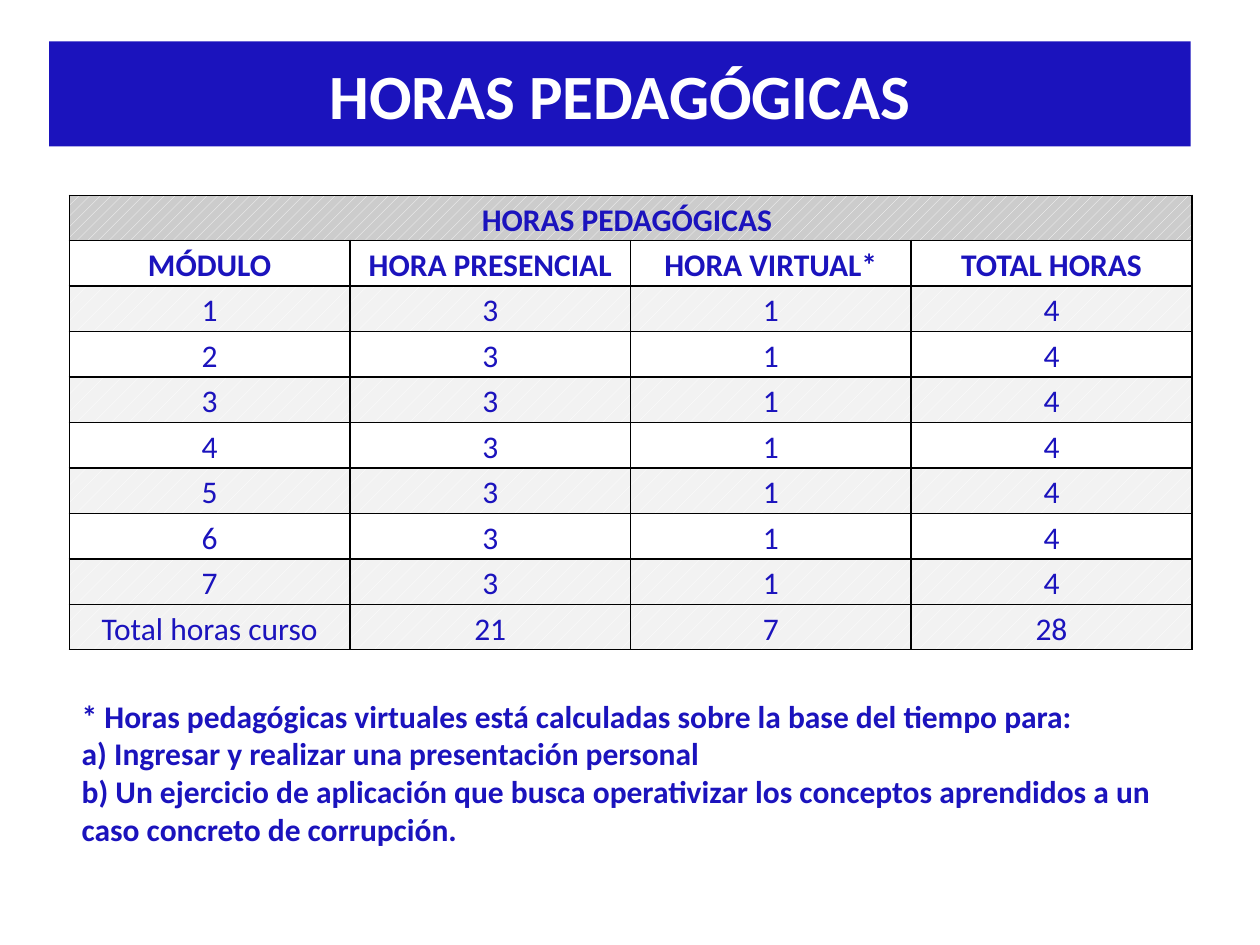
from lxml import etree
from pptx import Presentation
from pptx import util as u
from pptx.dml.color import RGBColor
from pptx.enum import dml, text
from pptx.oxml.ns import qn

BLUE = RGBColor(0x1B, 0x13, 0xBD)
WHITE = RGBColor(0xFF, 0xFF, 0xFF)
GRAY = RGBColor(0xCC, 0xCC, 0xCC)
PALE = RGBColor(0xF2, 0xF2, 0xF2)
BLACK = RGBColor(0, 0, 0)

HEAD = " HORAS PEDAGÓGICAS "
COLS = ["MÓDULO", "HORA PRESENCIAL", "HORA VIRTUAL*", "TOTAL HORAS"]
FACE, VIRT, COUNT = 3, 1, 7
NOTES = [
    "* Horas pedagógicas virtuales está calculadas sobre la base del tiempo para:",
    "a) Ingresar y realizar una presentación personal",
    "b) Un ejercicio de aplicación que busca operativizar los conceptos "
    "aprendidos a un caso concreto de corrupción.",
]


class Deck:
    font = "Calibri"
    size = 18

    def __init__(self, wide, high):
        self.prs = Presentation()
        self.prs.slide_width = u.Inches(wide)
        self.prs.slide_height = u.Inches(high)
        self.slide = self.prs.slides.add_slide(self.prs.slide_layouts[5])

    def box(self, left, top, width, height):
        wide, high = self.prs.slide_width, self.prs.slide_height
        return (round(left * wide), round(top * high),
                round(width * wide), round(height * high))

    def style(self, frame, color=BLUE, size=None, bold=True, align=None, space=None):
        for para in frame.paragraphs:
            para.alignment = align
            para.line_spacing = space
            for run in para.runs:
                font = run.font
                font.name, font.size = self.font, u.Pt(size or self.size)
                font.bold, font.color.rgb = bold, color

    def title(self, words, area):
        shape = self.slide.shapes.title
        shape.left, shape.top, shape.width, shape.height = self.box(*area)
        shape.fill.solid()
        shape.fill.fore_color.rgb = BLUE
        frame = shape.text_frame
        frame.text = words
        frame.auto_size = text.MSO_AUTO_SIZE.SHAPE_TO_FIT_TEXT
        self.style(frame, WHITE, 36, align=text.PP_ALIGN.CENTER)

    def border(self, cell):
        props = cell._tc.get_or_add_tcPr()
        for side in ("lnL", "lnR", "lnT", "lnB"):
            line = etree.SubElement(props, qn("a:" + side), w=str(u.Pt(1)))
            fill = etree.SubElement(line, qn("a:solidFill"))
            etree.SubElement(fill, qn("a:srgbClr"), val=str(BLACK))

    def shade(self, cell, tone, kind):
        if tone is None:
            cell.fill.background()
            return
        cell.fill.patterned()
        cell.fill.pattern = kind
        cell.fill.fore_color.rgb = WHITE
        cell.fill.back_color.rgb = tone

    def table(self, rows, area):
        grid = self.slide.shapes.add_table(
            len(rows), len(rows[-1]), *self.box(*area)).table
        grid.cell(0, 0).merge(grid.cell(0, len(rows[-1]) - 1))
        last = len(rows) - 1
        for r, row in enumerate(rows):
            tone = GRAY if r == 0 else PALE if r % 2 == 0 or r == last else None
            kind = dml.MSO_PATTERN.PERCENT_20 if r == 0 else dml.MSO_PATTERN.PERCENT_5
            for c, cell in enumerate(grid.rows[r].cells):
                cell.margin_left = cell.margin_right = u.Inches(0.07)
                cell.margin_top = cell.margin_bottom = 0
                self.border(cell)
                self.shade(cell, tone, kind)
                if c < len(row):
                    cell.text_frame.text = str(row[c])
                    self.style(cell.text_frame, bold=r < 2,
                               align=text.PP_ALIGN.CENTER, space=1.15)

    def notes(self, lines, area):
        frame = self.slide.shapes.add_textbox(*self.box(*area)).text_frame
        frame.word_wrap = True
        frame.auto_size = text.MSO_AUTO_SIZE.SHAPE_TO_FIT_TEXT
        frame.text = "\n".join(lines)
        self.style(frame)


def main():
    deck = Deck(10, 7.5)
    mods = [[n, FACE, VIRT, FACE + VIRT] for n in range(1, COUNT + 1)]
    sums = [sum(col) for col in list(zip(*mods))[1:]]
    rows = [[HEAD.lstrip()], COLS, *mods, ["Total horas curso", *sums]]
    left, wide = 0.55 / 10, 8.91 / 10
    deck.title(HEAD, (0.39 / 10, 0.39 / 7.5, 9.06 / 10, 0.71 / 7.5))
    deck.table(rows, (left, 1.55 / 7.5, wide, 3.61 / 7.5))
    deck.notes(NOTES, (left, 5.48 / 7.5, wide, 1.31 / 7.5))
    deck.prs.save("out.pptx")


if __name__ == "__main__":
    main()
